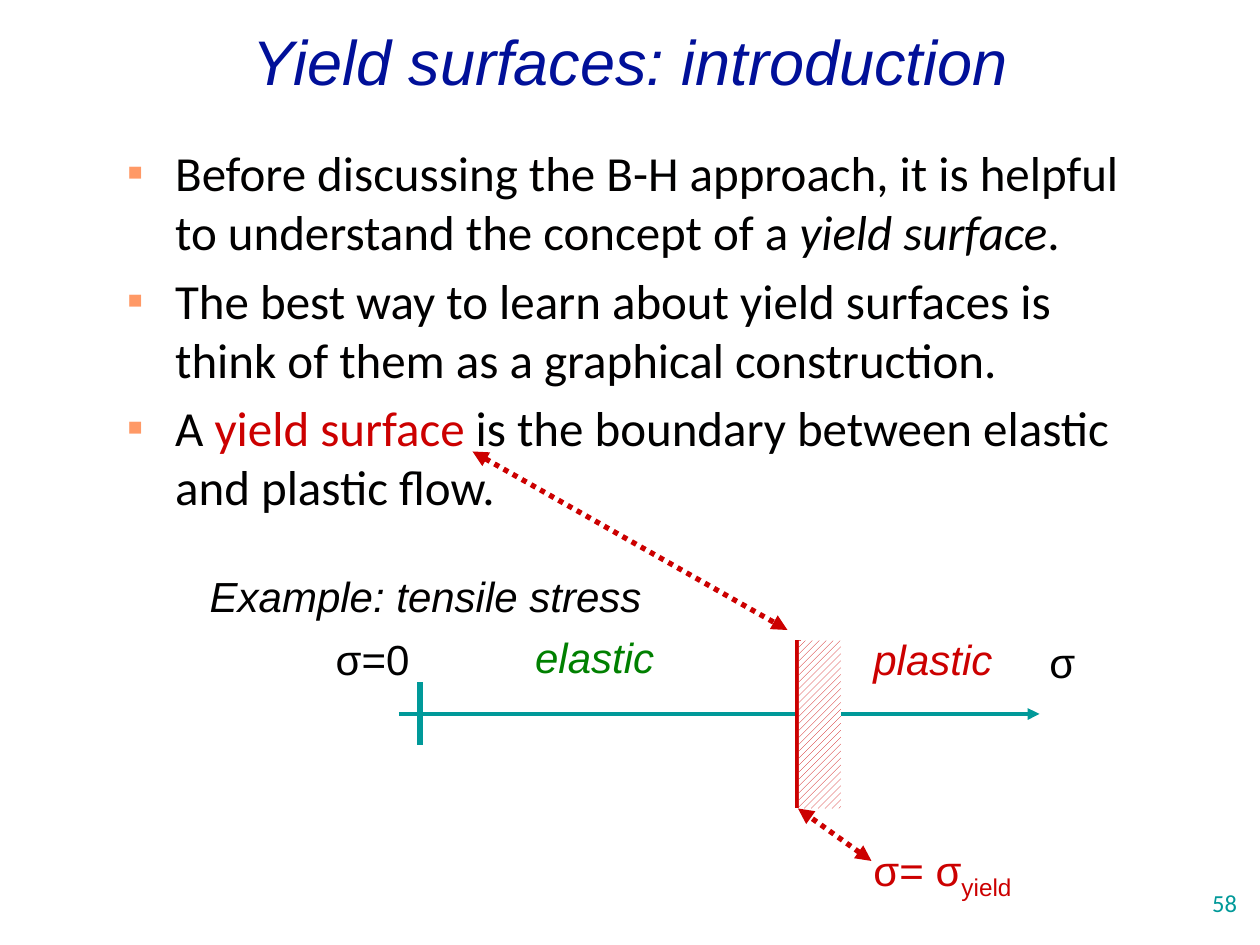
import pptx
import pptx.dml.color
import pptx.enum.dml
import pptx.enum.shapes
import pptx.enum.text
import pptx.oxml.ns
import pptx.util
from lxml import etree

Pt = pptx.util.Pt
qn = pptx.oxml.ns.qn
ALIGN = pptx.enum.text.PP_ALIGN
ANCHOR = pptx.enum.text.MSO_ANCHOR

COLORS = {
    "text": "010000",
    "title": "011099",
    "axis": "009999",
    "yield": "CC0000",
    "elastic": "008000",
    "bullet": "FF9966",
    "white": "FFFFFF",
}

BULLETS = [
    [("Before discussing the B-H approach, it is helpful to understand the concept of a ", ""),
     ("yield surface", "italic"), (".", "")],
    [("The best way to learn about yield surfaces is think of them as a graphical construction.", "")],
    [("A ", ""), ("yield surface", "red"),
     (" is the boundary between elastic and plastic flow.", "")],
]


def rgb(name):
    return pptx.dml.color.RGBColor.from_string(COLORS[name])


def set_font(p, size, color, name="Arial", italic=False):
    p.font.size = Pt(size)
    p.font.name = name
    p.font.italic = italic
    p.font.color.rgb = rgb(color)


def add_text(s, x, y, w, h, text, size, color, name="Arial", italic=False,
             align=ALIGN.LEFT, wrap=False):
    tf = s.shapes.add_textbox(Pt(x), Pt(y), Pt(w), Pt(h)).text_frame
    tf.word_wrap = wrap
    p = tf.paragraphs[0]
    p.alignment = align
    set_font(p, size, color, name, italic)
    p.add_run().text = text
    return tf


def add_line(s, x1, y1, x2, y2, color, width, ends=(), dotted=False):
    sp = s.shapes.add_connector(pptx.enum.shapes.MSO_CONNECTOR.STRAIGHT,
                                Pt(x1), Pt(y1), Pt(x2), Pt(y2))
    sp.line.color.rgb = rgb(color)
    sp.line.width = Pt(width)
    if dotted:
        sp.line.dash_style = pptx.enum.dml.MSO_LINE.ROUND_DOT
    ln = sp._element.spPr.find(qn("a:ln"))
    for end in ends:
        etree.SubElement(ln, qn("a:" + end), type="triangle")
    etree.SubElement(sp._element.spPr, qn("a:effectLst"))


def add_bullet(p):
    pPr = p._p.get_or_add_pPr()
    pPr.set("marL", str(Pt(27)))
    pPr.set("indent", str(-Pt(27)))
    clr = etree.Element(qn("a:buClr"))
    etree.SubElement(clr, qn("a:srgbClr"), val=COLORS["bullet"])
    marks = [clr,
             etree.Element(qn("a:buSzPct"), val="50000"),
             etree.Element(qn("a:buFont"), typeface="Arial"),
             etree.Element(qn("a:buChar"), char="■")]
    defaults = pPr.find(qn("a:defRPr"))
    for mark in marks:
        defaults.addprevious(mark)


def add_bullets(s):
    tf = s.shapes.add_textbox(Pt(66), Pt(78), Pt(600), Pt(216)).text_frame
    tf.word_wrap = True
    for i, runs in enumerate(BULLETS):
        p = tf.add_paragraph() if i else tf.paragraphs[0]
        p.space_before = Pt(5.6)
        set_font(p, 28, "text", "Calibri")
        add_bullet(p)
        for text, style in runs:
            r = p.add_run()
            r.text = text
            if style == "italic":
                r.font.italic = True
            elif style == "red":
                r.font.color.rgb = rgb("yield")


def add_hatch(s, x, y, w, h):
    sp = s.shapes.add_shape(pptx.enum.shapes.MSO_SHAPE.RECTANGLE,
                            Pt(x), Pt(y), Pt(w), Pt(h))
    sp.shadow.inherit = False
    sp.line.fill.background()
    sp.fill.patterned()
    sp.fill.pattern = pptx.enum.dml.MSO_PATTERN.WIDE_UPWARD_DIAGONAL
    sp.fill.fore_color.rgb = rgb("yield")
    sp.fill.back_color.rgb = rgb("white")


def add_diagram(s):
    both = ("headEnd", "tailEnd")
    add_line(s, 270, 258, 450, 360, "yield", 3, both, dotted=True)
    add_text(s, 112.75, 322.5, 270, 36, "Example: tensile stress", 24, "text", italic=True)
    add_line(s, 228, 408, 594, 408, "axis", 2.25, ("tailEnd",))
    add_line(s, 240, 390, 240, 426, "axis", 3)
    add_text(s, 184.75, 358.5, 64, 36, "σ=0", 24, "text")
    add_text(s, 592.5, 360, 32, 36, "σ", 24, "text")
    add_line(s, 456, 366, 456, 462, "yield", 3)
    add_hatch(s, 456.5, 366, 24, 96)
    add_text(s, 298.75, 357.25, 92, 36, "elastic", 24, "elastic", italic=True)
    add_text(s, 492, 358.5, 92, 36, "plastic", 24, "yield", italic=True)
    tf = add_text(s, 492, 479, 104, 36, "σ= σ", 24, "yield")
    r = tf.paragraphs[0].add_run()
    r.text = "yield"
    r.font._element.set("baseline", "-25000")
    add_line(s, 498, 492, 456, 462, "yield", 3, both, dotted=True)


def main():
    prs = pptx.Presentation()
    prs.slide_width, prs.slide_height = Pt(720), Pt(540)
    s = prs.slides.add_slide(prs.slide_layouts[6])
    add_text(s, 564, 504, 150, 36, "58", 14, "axis", "Calibri",
             align=ALIGN.RIGHT, wrap=True)
    tf = add_text(s, 120, 0, 480, 60, "Yield surfaces: introduction", 36, "title",
                  italic=True, align=ALIGN.CENTER, wrap=True)
    tf.vertical_anchor = ANCHOR.MIDDLE
    tf.paragraphs[0].line_spacing = 1.2
    add_bullets(s)
    add_diagram(s)
    prs.save("out.pptx")


if __name__ == "__main__":
    main()
